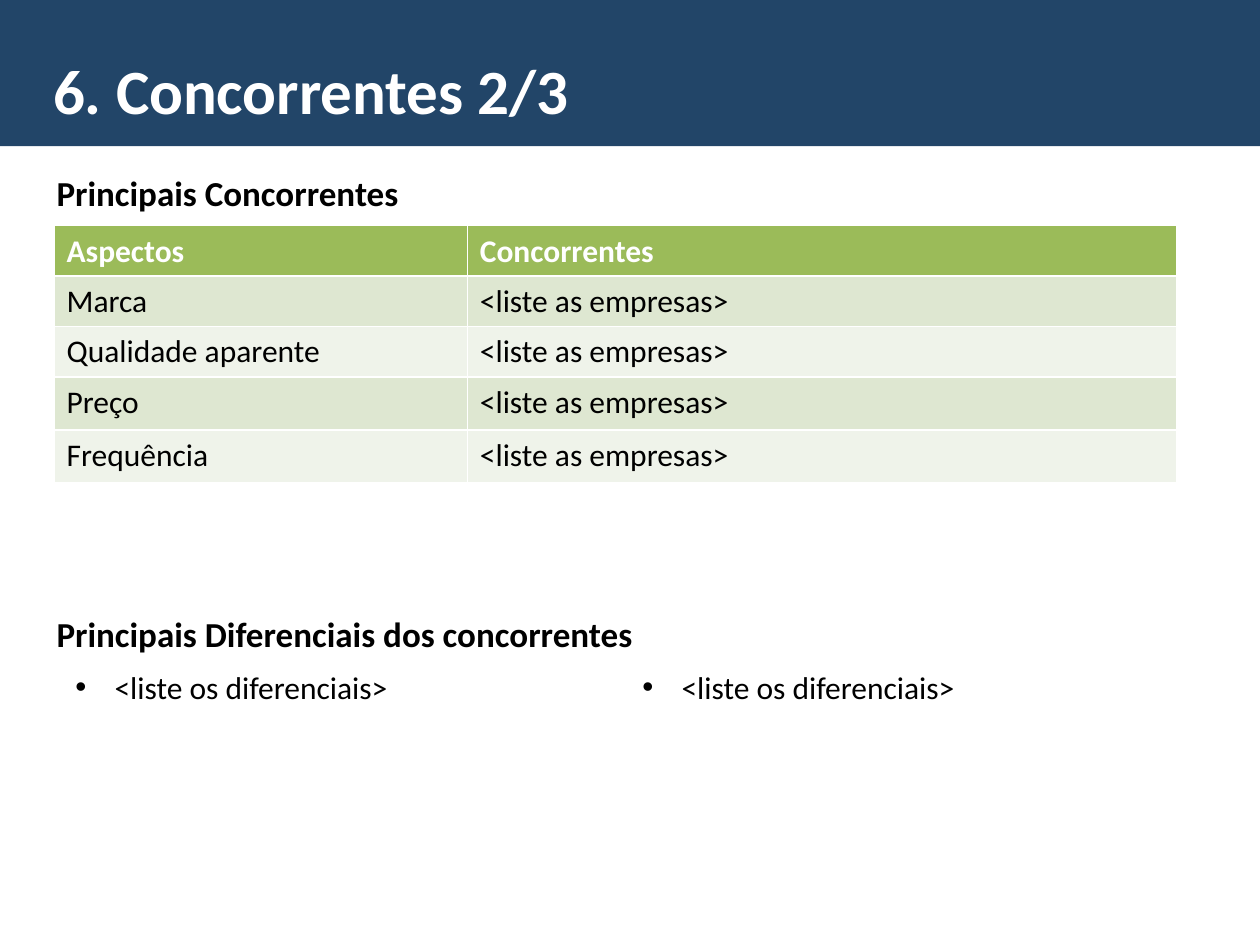
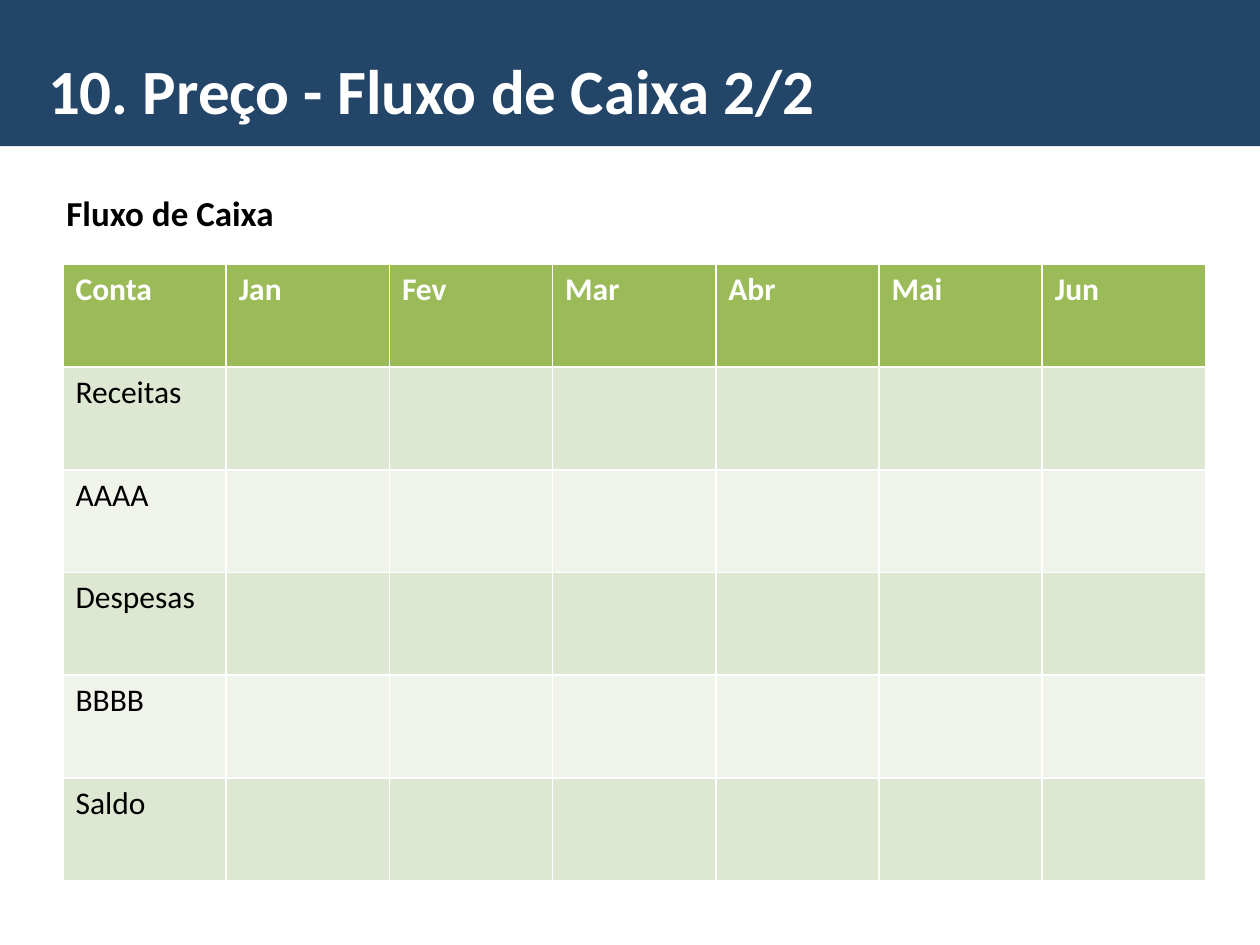
"""Build the competitor and cash-flow slides of a business plan."""
from lxml.etree import SubElement
from pptx import Presentation
from pptx.dml.color import RGBColor
from pptx.enum.shapes import MSO_SHAPE as Preset
from pptx.enum.text import MSO_ANCHOR as Anchor, MSO_AUTO_SIZE as AutoSize, PP_ALIGN as Align
from pptx.oxml.ns import qn
from pptx.util import Cm, Pt

COLOURS = {
    "band": "224568",
    "light": "FFFFFF",
    "dark": "000000",
    "header": "9BBB59",
    "odd": "DEE7D1",
    "even": "EFF3EA",
}
FONT = "Calibri"
BULLET_INDENT = Cm(0.79)


def write(frame, text, size, colour="dark", bold=False):
    para = frame.paragraphs[0]
    span = para.add_run()
    span.text = text
    span.font.name = FONT
    span.font.size = Pt(size)
    span.font.bold = bold
    span.font.color.rgb = RGBColor.from_string(COLOURS[colour])
    return para


def add_text(page, place, text, size, bold=False):
    box = page.shapes.add_textbox(*[Cm(length) for length in place])
    box.text_frame.word_wrap = True
    box.text_frame.auto_size = AutoSize.SHAPE_TO_FIT_TEXT
    return write(box.text_frame, text, size, bold=bold)


competitors = {
    "title": "6. Concorrentes 2/3",
    "title_left": 0.51,
    "headings": [
        ((0.89, 3.33, 11, 1.12), "Principais Concorrentes"),
        ((0.89, 12.22, 15, 1.12), "Principais Diferenciais dos concorrentes"),
    ],
    "bullets": [((left, 13.34, 11, 1.02), "<liste os diferenciais>") for left in (1.27, 12.7)],
    "table_place": (1.09, 4.55, 22.63, 5.18),
    "columns": [8.33, 14.3],
    "row_heights": [0.91] * 3 + [1.07] * 2,
    "rows": [["Aspectos", "Concorrentes"]]
    + [[aspect, "<liste as empresas>"] for aspect in ("Marca", "Qualidade aparente", "Preço", "Frequência")],
    "body_align": Align.JUSTIFY,
}
months = ["Jan", "Fev", "Mar", "Abr", "Mai", "Jun"]
cash_flow = {
    "title": "10. Preço - Fluxo de Caixa 2/2",
    "title_left": 0.41,
    "headings": [((1.09, 3.73, 22.8, 1.12), "Fluxo de Caixa")],
    "bullets": [],
    "table_place": (1.27, 5.33, 23.03, 12.4),
    "columns": [3.29] * 7,
    "row_heights": [2.07] * 6,
    "rows": [["Conta"] + months]
    + [[account] + [""] * len(months) for account in ("Receitas", "AAAA", "Despesas", "BBBB", "Saldo")],
    "body_align": Align.LEFT,
}

deck = Presentation()
deck.slide_width, deck.slide_height = Cm(25.4), Cm(19.05)
title_only = deck.slide_layouts[5]

for content in (competitors, cash_flow):
    page = deck.slides.add_slide(title_only)

    band = page.shapes.add_shape(Preset.RECTANGLE, 0, 0, deck.slide_width, Cm(2.95))
    band.shadow.inherit = False
    band.fill.solid()
    band.fill.fore_color.rgb = RGBColor.from_string(COLOURS["band"])
    band.line.fill.background()

    title = page.shapes.title
    title.element.addprevious(band.element)
    title.left, title.top = Cm(content["title_left"]), Cm(0.91)
    title.width, title.height = Cm(23.9), Cm(1.4)
    title.text_frame.auto_size = AutoSize.NONE
    title.text_frame.vertical_anchor = Anchor.TOP
    title.text_frame.margin_left = Cm(0.56)
    write(title.text_frame, content["title"], 36, "light", True).alignment = Align.LEFT

    for place, text in content["headings"]:
        add_text(page, place, text, 20, True)

    for place, text in content["bullets"]:
        para = add_text(page, place, text, 18)
        properties = para._p.get_or_add_pPr()
        properties.set("marL", str(BULLET_INDENT))
        properties.set("indent", str(-BULLET_INDENT))
        SubElement(properties, qn("a:buFont")).set("typeface", "Arial")
        SubElement(properties, qn("a:buChar")).set("char", "•")

    rows, columns = content["rows"], content["columns"]
    place = [Cm(length) for length in content["table_place"]]
    holder = page.shapes.add_table(len(rows), len(columns), *place)
    table = holder.table
    for column, width in zip(table.columns, columns):
        column.width = Cm(width)
    for row, height in zip(table.rows, content["row_heights"]):
        row.height = Cm(height)
    holder.height = place[3]

    for row_number, texts in enumerate(rows):
        is_header = row_number == 0
        fill = "header" if is_header else ("even", "odd")[row_number % 2]
        for column_number, text in enumerate(texts):
            cell = table.cell(row_number, column_number)
            cell.fill.solid()
            cell.fill.fore_color.rgb = RGBColor.from_string(COLOURS[fill])
            if text:
                para = write(cell.text_frame, text, 18, "light" if is_header else "dark", is_header)
                if column_number and not is_header:
                    para.alignment = content["body_align"]

deck.save("out.pptx")
